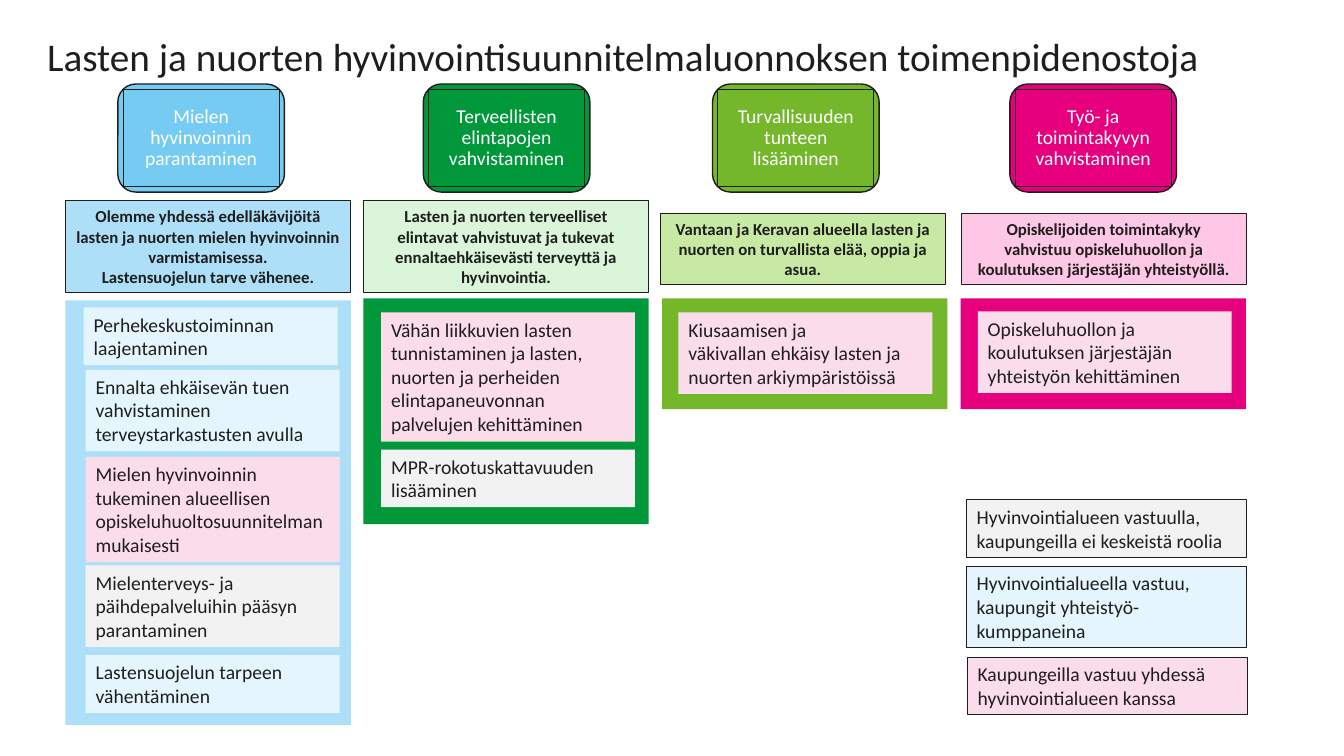
import pptx
import pptx.dml.color
import pptx.enum.shapes
import pptx.enum.text
import pptx.util

Pt = pptx.util.Pt
SHAPES = pptx.enum.shapes.MSO_SHAPE
ALIGN = pptx.enum.text.PP_ALIGN
ANCHOR = pptx.enum.text.MSO_ANCHOR

INK = "1E1E1E"
WHITE = "FFFFFF"
REGION_ONLY = "F2F2F2"
CITY_PARTNER = "E4F5FD"
SHARED = "FBDCEA"
COLUMN_WIDTH = 203.8
CARD_WIDTH = 181.4

GOALS = [
    dict(
        theme="Mielen hyvinvoinnin parantaminen",
        theme_left=84.2, theme_fill="76CBF3",
        aim="Olemme yhdessä edelläkävijöitä lasten ja nuorten mielen hyvinvoinnin "
            "varmistamisessa.\vLastensuojelun tarve vähenee.",
        aim_box=(46.8, 143.3, COLUMN_WIDTH, 65.5), aim_fill="ADE0F8",
        panel_box=(46.8, 214.6, COLUMN_WIDTH, 303.1), panel_fill="ADE0F8",
        actions=[
            (59.8, 219.6, 2, CITY_PARTNER, "Perhekeskustoiminnan laajentaminen"),
            (61.2, 264.2, 3, CITY_PARTNER,
             "Ennalta ehkäisevän tuen vahvistaminen terveystarkastusten avulla"),
            (61.2, 326.4, 4, SHARED,
             "Mielen hyvinvoinnin tukeminen alueellisen opiskeluhuoltosuunnitelman mukaisesti"),
            (61.2, 403.9, 3, REGION_ONLY,
             "Mielenterveys- ja päihdepalveluihin pääsyn parantaminen"),
            (61.2, 468, 2, CITY_PARTNER, "Lastensuojelun tarpeen vähentäminen"),
        ],
    ),
    dict(
        theme="Terveellisten elintapojen vahvistaminen",
        theme_left=302.4, theme_fill="00983A",
        aim="Lasten ja nuorten terveelliset elintavat vahvistuvat ja tukevat "
            "ennaltaehkäisevästi terveyttä ja hyvinvointia.",
        aim_box=(259.6, 143.3, COLUMN_WIDTH, 65.5), aim_fill="DAF5D9",
        panel_box=(259.6, 213.1, COLUMN_WIDTH, 161.3), panel_fill="00983A",
        actions=[
            (272.2, 223.2, 5, SHARED,
             "Vähän liikkuvien lasten tunnistaminen ja lasten, nuorten ja perheiden "
             "elintapaneuvonnan palvelujen kehittäminen"),
            (272.2, 321.1, 2, REGION_ONLY, "MPR-rokotuskattavuuden lisääminen"),
        ],
    ),
    dict(
        theme="Turvallisuuden tunteen lisääminen",
        theme_left=509, theme_fill="74B72B",
        aim="Vantaan ja Keravan alueella lasten ja nuorten on turvallista elää, "
            "oppia ja asua.",
        aim_box=(471.6, 152.4, COLUMN_WIDTH, 51), aim_fill="C8E9A3",
        panel_box=(473, 213.1, COLUMN_WIDTH, 79.2), panel_fill="74B72B",
        actions=[
            (484.6, 223.2, 3, SHARED,
             "Kiusaamisen ja\vväkivallan ehkäisy lasten ja nuorten arkiympäristöissä"),
        ],
    ),
    dict(
        theme="Työ- ja toimintakyvyn vahvistaminen",
        theme_left=721.4, theme_fill="E6007E",
        aim="Opiskelijoiden toimintakyky vahvistuu opiskeluhuollon ja koulutuksen "
            "järjestäjän yhteistyöllä.",
        aim_box=(686.6, 152.4, COLUMN_WIDTH, 51), aim_fill="FFC7E6",
        panel_box=(686.2, 213.1, COLUMN_WIDTH, 79.2), panel_fill="E6007E",
        actions=[
            (698.4, 222.5, 3, SHARED,
             "Opiskeluhuollon ja koulutuksen järjestäjän yhteistyön kehittäminen"),
        ],
    ),
]

LEGEND = [
    (0, 0, 2, REGION_ONLY, "Hyvinvointialueen vastuulla, kaupungeilla ei keskeistä roolia"),
    (0, 47.5, 3, CITY_PARTNER, "Hyvinvointialueella vastuu, kaupungit yhteistyö-kumppaneina"),
    (0.7, 112.3, 2, SHARED, "Kaupungeilla vastuu yhdessä hyvinvointialueen kanssa"),
]


def color(hex_code):
    return pptx.dml.color.RGBColor.from_string(hex_code)


def block(slide, box, fill=None, line_width=0, kind=SHAPES.RECTANGLE):
    shape = slide.shapes.add_shape(kind, *map(Pt, box))
    shape.shadow.inherit = False
    if fill:
        shape.fill.solid()
        shape.fill.fore_color.rgb = color(fill)
    else:
        shape.fill.background()
    if line_width:
        shape.line.color.rgb = color(INK)
        shape.line.width = Pt(line_width)
    else:
        shape.line.fill.background()
    return shape


def write(shape, text, size, ink=INK, bold=False, align=ALIGN.LEFT, anchor=ANCHOR.TOP):
    frame = shape.text_frame
    frame.word_wrap = True
    frame.vertical_anchor = anchor
    frame.text = text
    paragraph = frame.paragraphs[0]
    paragraph.alignment = align
    paragraph.font.name = "Calibri"
    paragraph.font.size = Pt(size)
    paragraph.font.bold = bold
    paragraph.font.color.rgb = color(ink)
    return frame


def add_title(slide, box, text):
    title = slide.shapes.add_textbox(*map(Pt, box))
    frame = write(title, text, 28, anchor=ANCHOR.BOTTOM)
    frame.paragraphs[0].line_spacing = 0.9


def add_theme(slide, box, fill, text):
    left, top, width, height = box
    block(slide, box, fill, 1, SHAPES.ROUNDED_RECTANGLE)
    label = block(slide, (left + 3.8, top + 3.8, width - 7.6, height - 7.6), line_width=0.75)
    frame = write(label, text, 14, WHITE, align=ALIGN.CENTER, anchor=ANCHOR.MIDDLE)
    frame.margin_left = frame.margin_right = Pt(3.6)
    frame.margin_top = frame.margin_bottom = Pt(3.6)
    frame.paragraphs[0].line_spacing = 0.9
    frame.paragraphs[0].space_after = Pt(5)


def add_card(slide, left, top, width, lines, fill, text, line_width=0):
    card = block(slide, (left, top, width, 7.2 + 17 * lines), fill, line_width)
    write(card, text, 14)


def add_goal(slide, goal):
    add_theme(slide, (goal["theme_left"], 60, 119, 77.2), goal["theme_fill"], goal["theme"])
    block(slide, goal["panel_box"], goal["panel_fill"])
    for left, top, lines, fill, text in goal["actions"]:
        add_card(slide, left, top, CARD_WIDTH, lines, fill, text)
    aim = block(slide, goal["aim_box"], goal["aim_fill"], 0.75)
    write(aim, goal["aim"], 12, bold=True, align=ALIGN.CENTER, anchor=ANCHOR.MIDDLE)


def add_legend(slide, left, top, width):
    for shift, drop, lines, fill, text in LEGEND:
        add_card(slide, left + shift, top + drop, width, lines, fill, text, 0.75)


def main():
    deck = pptx.Presentation()
    deck.slide_width, deck.slide_height = Pt(960), Pt(540)
    slide = deck.slides.add_slide(deck.slide_layouts[6])
    add_title(slide, (26.6, 22.3, 862, 38.2),
              "Lasten ja nuorten hyvinvointisuunnitelmaluonnoksen toimenpidenostoja")
    for goal in GOALS:
        add_goal(slide, goal)
    add_legend(slide, 690.5, 357.1, 199.8)
    deck.save("out.pptx")


if __name__ == "__main__":
    main()
